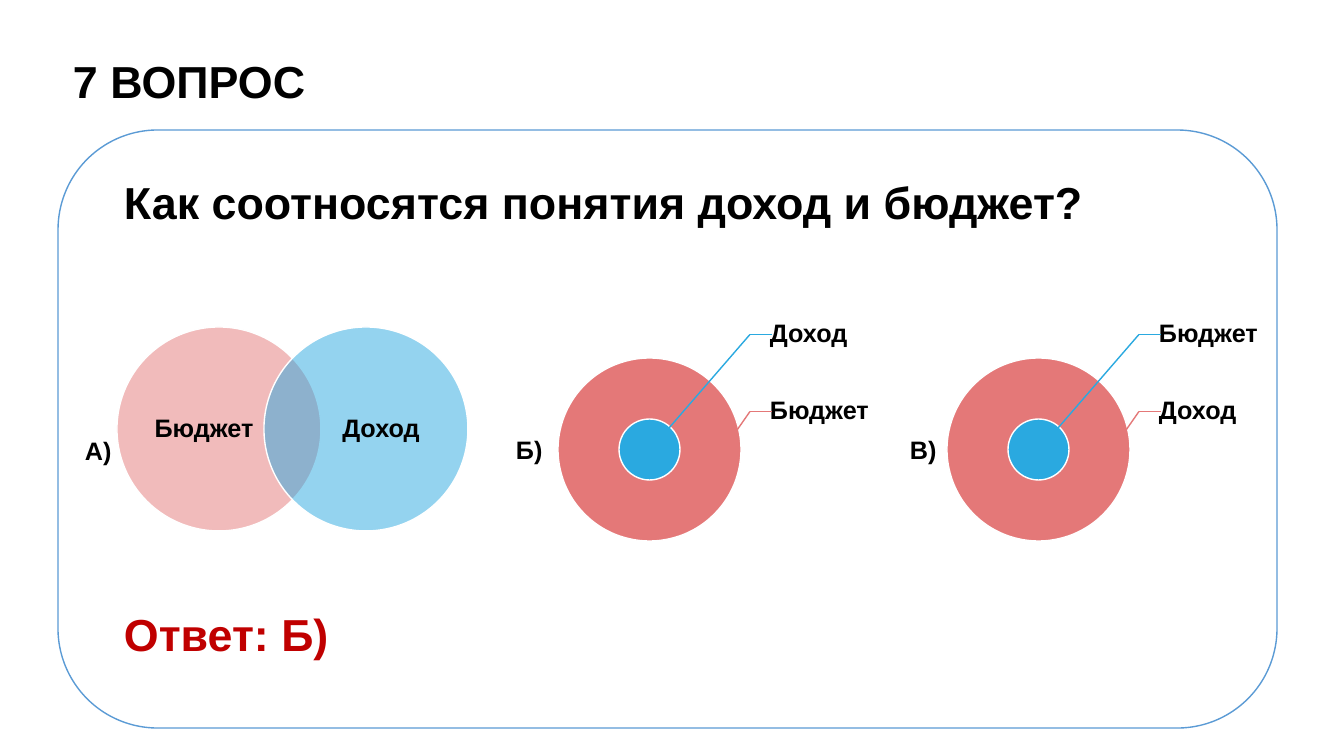
"""Build the quiz slide that compares income and budget in three circle diagrams."""
from lxml.etree import SubElement
from pptx import Presentation
from pptx.dml.color import RGBColor
from pptx.enum.shapes import MSO_CONNECTOR as LINE, MSO_SHAPE as SHAPE
from pptx.enum.text import MSO_ANCHOR as ANCHOR, PP_ALIGN as ALIGN
from pptx.oxml.ns import qn
from pptx.util import Emu, Pt

SLIDE = (1344, 756)
EMU_PER_PX = 12192000 / SLIDE[0]
COLORS = {"text": "000000", "answer": "C00000", "white": "FFFFFF",
          "panel": "5B9BD5", "red": "E47878", "blue": "2AA9E0"}

TITLE = "7 ВОПРОС"
QUESTION = "Как соотносятся понятия доход и бюджет?"
ANSWER = "Ответ: Б)"
LETTERS = [("А)", 75, 430), ("Б)", 506, 429), ("В)", 900, 429)]
VENN = [("Бюджет", "red", 117, 145), ("Доход", "blue", 264, 322)]
TARGETS = [(558, ("Доход", "Бюджет")), (947, ("Бюджет", "Доход"))]

TITLE_BOX = (73, 46, 1021, 73)
PANEL_BOX = (58, 130, 1219, 598)
BODY_BOX = (102, 165, 1146, 509)
VENN_TOP, VENN_SIZE = 327, 204
VENN_LABEL_TOP, VENN_LABEL_SIZE = 351, (118, 156)
DISC_TOP, DISC_SIZE = 358, 183
DOT_SIZE = DISC_SIZE // 3
LABEL_TOP, LABEL_SIZE, LABEL_DX = 296, (125, 77), 198
TICK_DX, TICK_LENGTH = 192, 22
LEADERS = [("blue", 92, 92), ("red", 136, 134)]

LABEL_FRAME = {"vertical_anchor": ANCHOR.MIDDLE}
NO_INSETS, LABEL_INSETS = (0, 0, 0, 0), (14, 3, 3, 3)
SIDES = ("left", "top", "right", "bottom")


def px(n):
    return Emu(round(n * EMU_PER_PX))


def rgb(name):
    return RGBColor.from_string(COLORS[name])


def set_all(obj, values):
    for name, value in values.items():
        setattr(obj, name, value)


def add_shape(parent, kind, box, fill, line, alpha=None):
    s = parent.shapes.add_shape(kind, *map(px, box))
    s.shadow.inherit = False
    s.fill.solid()
    s.fill.fore_color.rgb = rgb(fill)
    if alpha:
        color = s.fill._xPr.find(".//" + qn("a:srgbClr"))
        SubElement(color, qn("a:alpha")).set("val", str(alpha * 1000))
    s.line.color.rgb = rgb(line)
    s.line.width = Pt(1)
    return s


def add_text(parent, box, lines, size=18, insets=(10, 5, 10, 5), frame=None, para=None):
    tf = parent.shapes.add_textbox(*map(px, box)).text_frame
    set_all(tf, {"word_wrap": True, **(frame or {})})
    set_all(tf, {f"margin_{side}": px(n) for side, n in zip(SIDES, insets)})
    for i, (text, color) in enumerate(lines):
        p = tf.add_paragraph() if i else tf.paragraphs[0]
        set_all(p, para or {})
        r = p.add_run()
        r.text = text
        set_all(r.font, {"name": "Arial", "size": Pt(size), "bold": True})
        r.font.color.rgb = rgb(color)
    return tf


def add_line(parent, start, end, color):
    c = parent.shapes.add_connector(LINE.STRAIGHT, *map(px, start + end))
    c.line.color.rgb = rgb(color)
    c.line.width = Pt(1)
    SubElement(c._element.spPr, qn("a:effectLst"))


def add_venn(s):
    group = s.shapes.add_group_shape()
    for text, color, left, label_left in VENN:
        add_shape(group, SHAPE.OVAL, (left, VENN_TOP, VENN_SIZE, VENN_SIZE), color, "white", 50)
        add_text(group, (label_left, VENN_LABEL_TOP, *VENN_LABEL_SIZE), [(text, "text")],
                 insets=NO_INSETS, frame=LABEL_FRAME,
                 para={"alignment": ALIGN.CENTER, "line_spacing": 0.9})


def add_target(s, left, labels):
    group = s.shapes.add_group_shape()
    for size, color in ((DISC_SIZE, "red"), (DOT_SIZE, "blue")):
        inset = (DISC_SIZE - size) // 2
        add_shape(group, SHAPE.OVAL, (left + inset, DISC_TOP + inset, size, size), color, "white")
    width, height = LABEL_SIZE
    for i, (text, (color, dx, dy)) in enumerate(zip(labels, LEADERS)):
        top = LABEL_TOP + i * height
        bend = (left + TICK_DX, top + height / 2)
        add_text(group, (left + LABEL_DX, top, width, height), [(text, "text")],
                 insets=LABEL_INSETS, frame=LABEL_FRAME, para={"line_spacing": 0.9})
        add_line(group, bend, (bend[0] + TICK_LENGTH, bend[1]), color)
        add_line(group, bend, (left + dx, DISC_TOP + dy), color)


def main():
    prs = Presentation()
    set_all(prs, {"slide_width": px(SLIDE[0]), "slide_height": px(SLIDE[1])})
    s = prs.slides.add_slide(prs.slide_layouts[6])

    add_text(s, TITLE_BOX, [(TITLE, "text")], 32, (0, 0, 10, 10), para={"line_spacing": 1.15})
    add_shape(s, SHAPE.ROUNDED_RECTANGLE, PANEL_BOX, "white", "panel")
    body = add_text(s, BODY_BOX, [(QUESTION, "text"), (ANSWER, "answer")], 32,
                    (22, 10, 10, 10), para={"alignment": ALIGN.JUSTIFY})
    body.paragraphs[1].space_before = Pt(270)

    add_venn(s)
    for left, labels in TARGETS:
        add_target(s, left, labels)
    for text, left, top in LETTERS:
        add_text(s, (left, top, 62, 40), [(text, "text")])
    prs.save("out.pptx")


if __name__ == "__main__":
    main()
